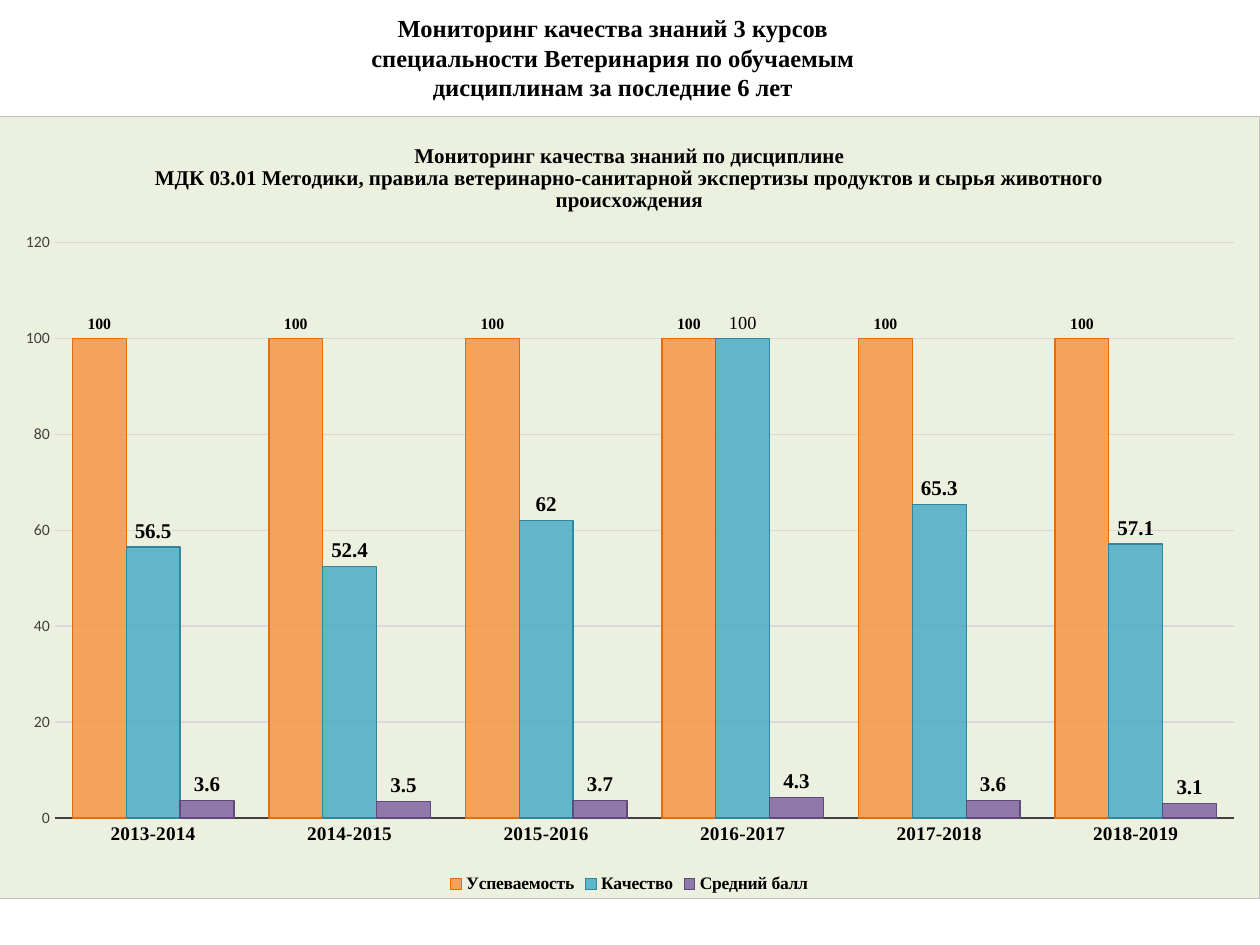
from lxml import etree
from pptx import Presentation
from pptx.chart.data import CategoryChartData
from pptx.dml.color import RGBColor
from pptx.enum.chart import XL_CHART_TYPE as Kind, XL_LABEL_POSITION as LabelPos
from pptx.enum.chart import XL_LEGEND_POSITION as LegendPos, XL_TICK_MARK as Tick
from pptx.enum.text import MSO_ANCHOR, PP_ALIGN
from pptx.oxml import parse_xml
from pptx.oxml.ns import nsdecls, qn
from pptx.util import Pt

COLORS = {"text": "000000", "axis": "404040", "grid": "D9D9D9", "panel": "EBF1DE", "border": "BFBFBF"}
SERIF = "Times New Roman"
HEADING = "Мониторинг качества знаний 3 курсов специальности Ветеринария по обучаемым дисциплинам за последние 6 лет"
CHART_TITLE = [
    "Мониторинг качества знаний по дисциплине",
    "МДК 03.01 Методики, правила ветеринарно-санитарной экспертизы продуктов и сырья животного происхождения",
]
YEARS = [f"{year}-{year + 1}" for year in range(2013, 2019)]
SERIES = [
    ("Успеваемость", [100] * 6, "F79646", "E46C0A", 9),
    ("Качество", [56.5, 52.4, 62, 100, 65.3, 57.1], "4BACC6", "31859C", 12),
    ("Средний балл", [3.6, 3.5, 3.7, 4.3, 3.6, 3.1], "8064A2", "604A7B", 12),
]


def set_font(font, size, color=COLORS["text"], bold=True, name=SERIF):
    """Set the face, size, weight and colour of a font."""
    font.name, font.size, font.bold = name, Pt(size), bold
    font.color.rgb = RGBColor.from_string(color)


def set_line(line, color, width=0.75):
    """Set the colour and width of a line."""
    line.color.rgb = RGBColor.from_string(color)
    line.width = Pt(width)


def add_heading(s, box):
    """Place the centred slide heading in the box."""
    tf = s.shapes.add_textbox(*box).text_frame
    tf.word_wrap = True
    tf.vertical_anchor = MSO_ANCHOR.MIDDLE
    p = tf.paragraphs[0]
    p.alignment = PP_ALIGN.CENTER
    r = p.add_run()
    r.text = HEADING
    set_font(r.font, 14)


def style_area(chart):
    """Fill and outline the chart area and fix the plot position."""
    root = chart.element.find(qn("c:chart"))
    root.addnext(parse_xml(
        f'<c:spPr {nsdecls("c", "a")}>'
        f'<a:solidFill><a:srgbClr val="{COLORS["panel"]}"/></a:solidFill>'
        f'<a:ln w="{Pt(0.75)}"><a:solidFill><a:srgbClr val="{COLORS["border"]}"/></a:solidFill></a:ln>'
        '</c:spPr>'))
    plot_area = root.find(qn("c:plotArea"))
    for old in plot_area.findall(qn("c:layout")):
        plot_area.remove(old)
    layout = parse_xml(f'<c:layout {nsdecls("c")}><c:manualLayout/></c:layout>')
    parts = [("layoutTarget", "inner"), ("xMode", "edge"), ("yMode", "edge"),
             ("x", "0.044"), ("y", "0.161"), ("w", "0.936"), ("h", "0.736")]
    for tag, value in parts:
        etree.SubElement(layout[0], qn(f"c:{tag}")).set("val", value)
    plot_area.insert(0, layout)


def style_title(chart):
    """Write the chart title, one paragraph a line."""
    chart.has_title = True
    chart.chart_title.include_in_layout = False
    tf = chart.chart_title.text_frame
    for i, text in enumerate(CHART_TITLE):
        p = tf.add_paragraph() if i else tf.paragraphs[0]
        r = p.add_run()
        r.text = text
        set_font(r.font, 12)


def style_axes(chart):
    """Format both axes and the gridlines."""
    cat, val = chart.category_axis, chart.value_axis
    for axis in (cat, val):
        axis.major_tick_mark = axis.minor_tick_mark = Tick.NONE
    set_font(cat.tick_labels.font, 11)
    set_line(cat.format.line, COLORS["axis"], 1.5)
    set_font(val.tick_labels.font, 9, COLORS["axis"], False, "Calibri")
    val.format.line.fill.background()
    val.minimum_scale, val.maximum_scale, val.major_unit = 0, 120, 20
    set_line(val.major_gridlines.format.line, COLORS["grid"])


def style_series(series, fill, line, size):
    """Colour one series and show its values above the columns."""
    series.format.fill.solid()
    series.format.fill.fore_color.rgb = RGBColor.from_string(fill)
    color = series.format.fill._xPr.find(f'{qn("a:solidFill")}/{qn("a:srgbClr")}')
    etree.SubElement(color, qn("a:alpha")).set("val", "85000")
    set_line(series.format.line, line)
    labels = series.data_labels
    labels.show_value = True
    labels.position = LabelPos.OUTSIDE_END
    set_font(labels.font, size)


def add_results_chart(s, box):
    """Place the chart of yearly results in the box."""
    data = CategoryChartData()
    data.categories = YEARS
    for name, values, *_ in SERIES:
        data.add_series(name, values)
    chart = s.shapes.add_chart(Kind.COLUMN_CLUSTERED, *box, data).chart
    set_font(chart.font, 10, bold=False, name="Calibri")
    style_area(chart)
    style_title(chart)
    style_axes(chart)
    plot = chart.plots[0]
    plot.gap_width, plot.overlap, plot.vary_by_categories = 65, 0, False
    for series, (_, _, fill, line, size) in zip(plot.series, SERIES):
        style_series(series, fill, line, size)
    label = plot.series[1].points[3].data_label
    set_font(label.font, 10.5, bold=False)
    label.position = LabelPos.OUTSIDE_END
    chart.has_legend = True
    chart.legend.position = LegendPos.BOTTOM
    chart.legend.include_in_layout = False
    set_font(chart.legend.font, 10)


def main():
    """Build the slide and save it."""
    prs = Presentation()
    prs.slide_width, prs.slide_height = Pt(720), Pt(540)
    s = prs.slides.add_slide(prs.slide_layouts[6])
    add_heading(s, (Pt(178.5), Pt(3.5), Pt(343.5), Pt(58.5)))
    add_results_chart(s, (Pt(-0.7), Pt(66.2), Pt(720.7), Pt(447.8)))
    prs.save("out.pptx")


if __name__ == "__main__":
    main()
